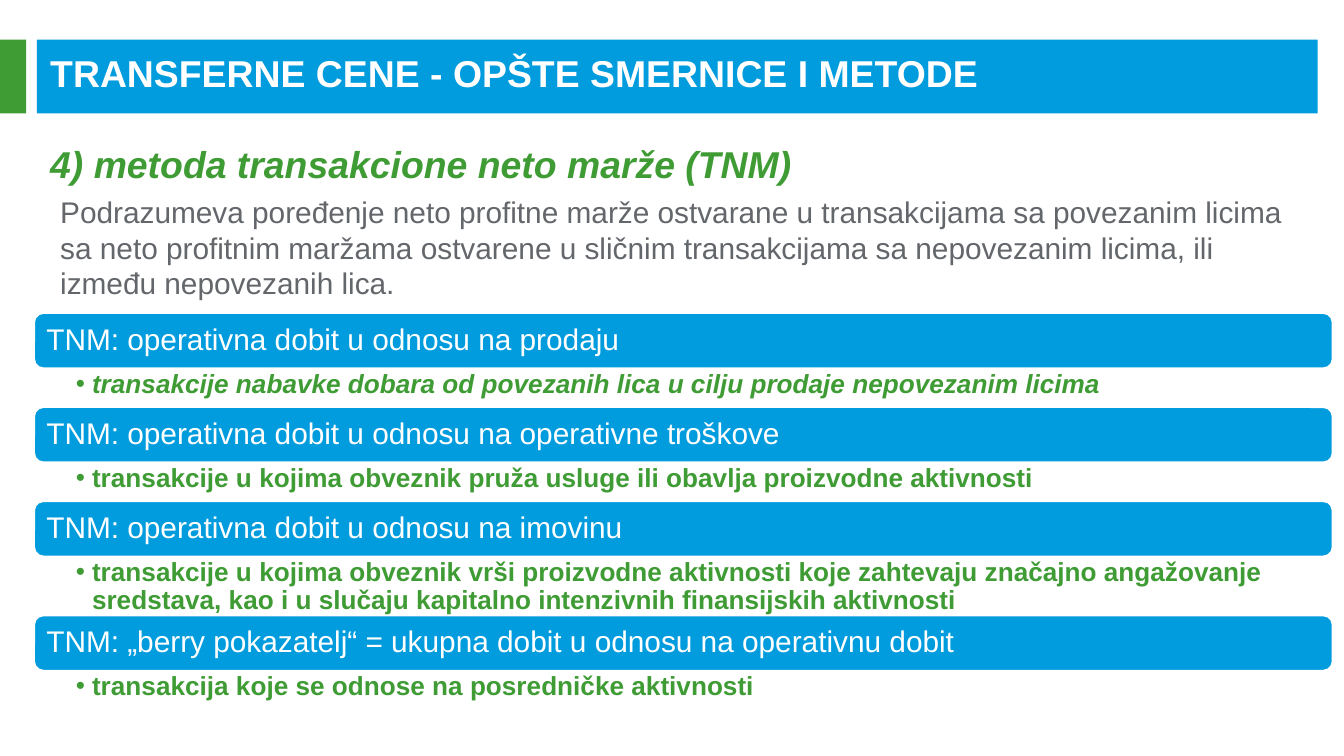
from lxml.etree import SubElement
from pptx import Presentation
from pptx.dml.color import RGBColor
from pptx.enum.shapes import MSO_SHAPE
from pptx.enum.text import MSO_ANCHOR, PP_ALIGN
from pptx.oxml.ns import qn
from pptx.util import Inches, Pt

HUES = {"blue": "009CDE", "green": "3F9C35", "gray": "63666A", "white": "FFFFFF"}
COLS, ROWS = 100, 56.25


def hue(name):
    return RGBColor.from_string(HUES[name])


def write(shape, text, size=16, color="white", bold=False, italic=False,
          inset=(0.1, 0.05, 0.1, 0.05), middle=False, line=None, bullet=False):
    frame = shape.text_frame
    frame.word_wrap = True
    frame.margin_left, frame.margin_top, frame.margin_right, frame.margin_bottom = map(Inches, inset)
    frame.vertical_anchor = MSO_ANCHOR.MIDDLE if middle else MSO_ANCHOR.TOP
    para = frame.paragraphs[0]
    para.text = text
    para.alignment = PP_ALIGN.LEFT
    if line:
        para.line_spacing = line
    if bullet:
        props = para._p.get_or_add_pPr()
        props.set("marL", str(Inches(0.12)))
        props.set("indent", str(Inches(-0.12)))
        SubElement(props, qn("a:buFont")).set("typeface", "Arial")
        SubElement(props, qn("a:buChar")).set("char", "•")
    font = para.runs[0].font
    font.name, font.size, font.bold, font.italic = "Arial", Pt(size), bold, italic
    font.color.rgb = hue(color)


class Deck:
    """Hold the style, the grid and the current slide."""

    def __init__(self):
        self.file = Presentation()
        self.file.slide_width = Inches(10)
        self.file.slide_height = self.file.slide_width * 9 // 16
        self.slide = self.file.slides.add_slide(self.file.slide_layouts[6])
        self.col = self.file.slide_width / COLS
        self.row = self.file.slide_height / ROWS

    def place(self, left, top, width, height):
        return [round(n * unit) for n, unit in
                zip((left, top, width, height), (self.col, self.row) * 2)]

    def block(self, *area, color="blue", kind=MSO_SHAPE.RECTANGLE, edge=None):
        shape = self.slide.shapes.add_shape(kind, *self.place(*area))
        shape.shadow.inherit = False
        shape.fill.solid()
        shape.fill.fore_color.rgb = hue(color)
        if edge:
            shape.line.color.rgb = hue(edge)
            shape.line.width = Pt(0.85)
        else:
            shape.line.fill.background()
        return shape

    def label(self, *area, text, **style):
        box = self.slide.shapes.add_textbox(*self.place(*area))
        write(box, text, **style)

    def topic(self, top, head, note, lines, italic):
        self.block(2.55, top, 96.6, 4.1, kind=MSO_SHAPE.ROUNDED_RECTANGLE, edge="white")
        self.label(2.75, top + 0.2, 96.2, 3.7, text=head, inset=(0.07,) * 4,
                   middle=True, line=0.9)
        top += 4.1
        height = 1.4 + 1.5 * lines
        self.label(2.55, top, 96.6, height, text=note, size=14, color="green", bold=True,
                   italic=italic, inset=(0.31, 0.02, 0.11, 0.02), line=0.9, bullet=True)
        return top + height


TOPICS = [
    ("TNM: operativna dobit u odnosu na prodaju",
     "transakcije nabavke dobara od povezanih lica u cilju prodaje nepovezanim licima", 1, True),
    ("TNM: operativna dobit u odnosu na operativne troškove",
     "transakcije u kojima obveznik pruža usluge ili obavlja proizvodne aktivnosti", 1, False),
    ("TNM: operativna dobit u odnosu na imovinu",
     "transakcije u kojima obveznik vrši proizvodne aktivnosti koje zahtevaju značajno "
     "angažovanje sredstava, kao i u slučaju kapitalno intenzivnih finansijskih aktivnosti",
     2, False),
    ("TNM: „berry pokazatelj“ = ukupna dobit u odnosu na operativnu dobit",
     "transakcija koje se odnose na posredničke aktivnosti", 1, False),
]


def main():
    deck = Deck()
    deck.block(2.75, 2.95, 95.3, 5.5)
    deck.block(0, 2.95, 1.95, 5.5, color="green")
    deck.label(2.75, 3.9, 94.5, 3, text="TRANSFERNE CENE - OPŠTE SMERNICE I METODE",
               size=20, bold=True, middle=True)
    deck.label(2.75, 10, 95.3, 5.3, text="4) metoda transakcione neto marže (TNM)",
               size=20, color="green", bold=True, italic=True)
    deck.label(3.5, 13.9, 94.7, 9.1, color="gray",
               text="Podrazumeva poređenje neto profitne marže ostvarane u transakcijama sa "
                    "povezanim licima sa neto profitnim maržama ostvarene u sličnim transakcijama "
                    "sa nepovezanim licima, ili između nepovezanih lica.")
    top = 23.3
    for topic in TOPICS:
        top = deck.topic(top, *topic)
    deck.file.save("out.pptx")


if __name__ == "__main__":
    main()
